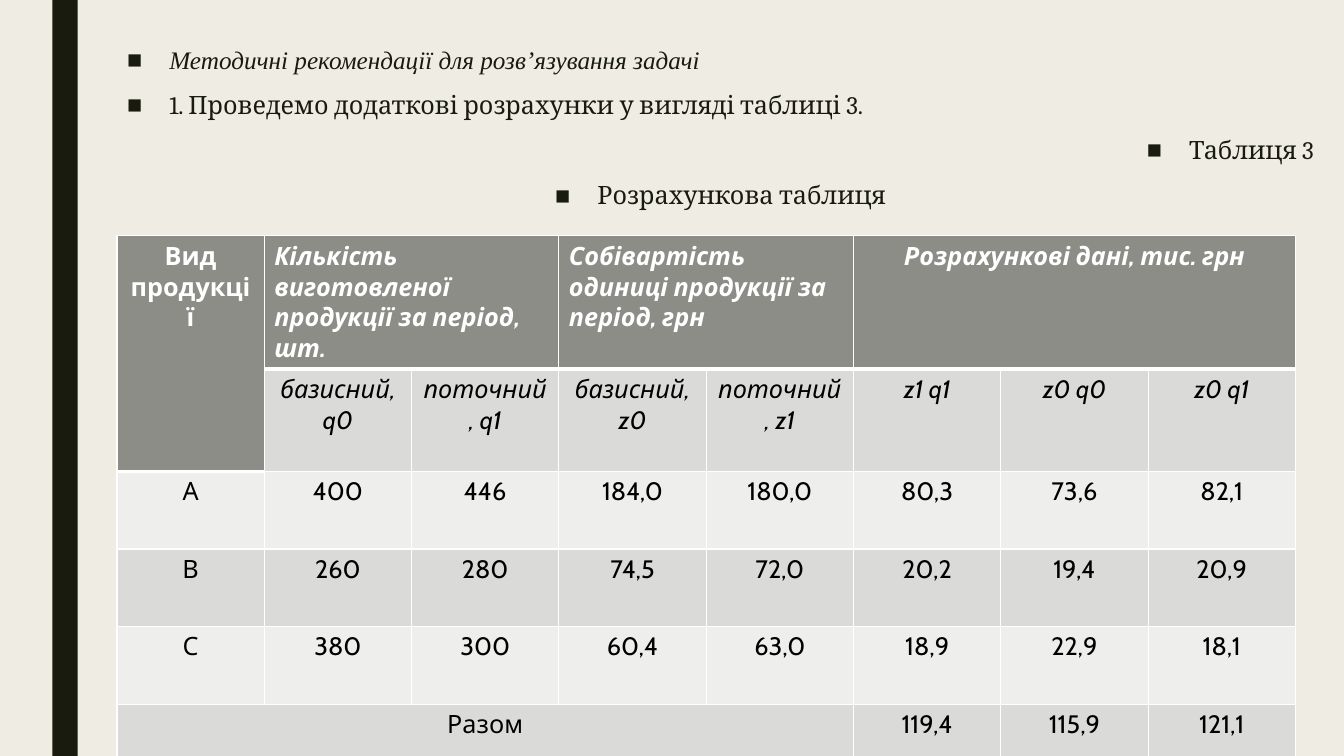
from lxml import etree
from pptx import Presentation
from pptx.dml.color import RGBColor
from pptx.enum.shapes import MSO_SHAPE
from pptx.enum.text import MSO_ANCHOR, MSO_AUTO_SIZE, PP_ALIGN
from pptx.oxml.ns import qn
from pptx.util import Inches, Pt

LEFT, CENTER, RIGHT = PP_ALIGN.LEFT, PP_ALIGN.CENTER, PP_ALIGN.RIGHT
RECTANGLE = MSO_SHAPE.RECTANGLE
TOP, NO_AUTOFIT = MSO_ANCHOR.TOP, MSO_AUTO_SIZE.NONE

INTRO = [
    # text, alignment, font, italic
    ("Методичні рекомендації для розв’язування задачі", LEFT, "Times New Roman", True),
    ("1. Проведемо додаткові розрахунки у вигляді таблиці 3.", LEFT, "Cambria", False),
    ("Таблиця 3", RIGHT, "Cambria", False),
    ("Розрахункова таблиця", CENTER, "Cambria", False),
]
# None marks a cell covered by a merged neighbour
ROWS = [
    ["Вид продукції", "Кількість виготовленої продукції за період, шт.", None,
     "Собівартість одиниці продукції за період, грн", None,
     "Розрахункові дані, тис. грн", None, None],
    [None, "базисний, q0", "поточний, q1", "базисний, z0", "поточний, z1",
     "z1 q1", "z0 q0", "z0 q1"],
    ["А", "400", "446", "184,0", "180,0", "80,3", "73,6", "82,1"],
    ["В", "260", "280", "74,5", "72,0", "20,2", "19,4", "20,9"],
    ["С", "380", "300", "60,4", "63,0", "18,9", "22,9", "18,1"],
    ["Разом", None, None, None, None, "119,4", "115,9", "121,1"],
]
MERGES = [((0, 0), (1, 0)), ((0, 1), (0, 2)), ((0, 3), (0, 4)),
          ((0, 5), (0, 7)), ((5, 0), (5, 4))]
LEFT_ALIGNED = {(0, 1), (0, 3)}

THEME = {
    "background": "EFEDE3", "ink": "191B0E", "header": "8C8D86",
    "bands": ("EEEEED", "DADBD9"), "white": "FFFFFF", "black": "000000",
    "table_font": "Cabin", "size": Pt(18), "thin": Pt(1), "thick": Pt(3),
}


def rgb(name):
    return RGBColor.from_string(THEME[name])


def set_format(target, values):
    for name, value in values.items():
        setattr(target, name, value)


def add_bullet(p):
    pPr = p._p.get_or_add_pPr()
    pPr.set("marL", str(Inches(0.42)))
    pPr.set("indent", str(-Inches(0.42)))
    etree.SubElement(pPr, qn("a:buFont"), typeface="Arial")
    etree.SubElement(pPr, qn("a:buChar"), char="■")


def set_borders(cell, top, bottom):
    """Draw white cell edges; call before setting the cell's fill."""
    tcPr = cell._tc.get_or_add_tcPr()
    thin = THEME["thin"]
    for side, width in (("L", thin), ("R", thin), ("T", top), ("B", bottom)):
        line = etree.SubElement(tcPr, qn(f"a:ln{side}"), w=str(width))
        fill = etree.SubElement(line, qn("a:solidFill"))
        etree.SubElement(fill, qn("a:srgbClr"), val=THEME["white"])


def add_side_bar(s):
    bar = s.shapes.add_shape(RECTANGLE, Inches(0.52), 0, Inches(0.25), Inches(7.5))
    bar.shadow.inherit = False
    bar.fill.solid()
    bar.fill.fore_color.rgb = rgb("ink")
    bar.line.fill.background()


def add_intro(s):
    s.shapes.title.element.getparent().remove(s.shapes.title.element)
    body = s.placeholders[1]
    set_format(body, {"left": Inches(1.16), "top": Inches(0.41),
                      "width": Inches(11.97), "height": Inches(7.09)})
    tf = body.text_frame
    set_format(tf, {"word_wrap": True, "auto_size": NO_AUTOFIT, "vertical_anchor": TOP})
    for i, (text, align, font, italic) in enumerate(INTRO):
        p = tf.add_paragraph() if i else tf.paragraphs[0]
        add_bullet(p)
        set_format(p, {"alignment": align, "line_spacing": 0.94,
                       "space_before": Pt(10 if i else 0), "space_after": Pt(2)})
        r = p.add_run()
        r.text = text
        set_format(r.font, {"name": font, "size": THEME["size"], "italic": italic})
        r.font.color.rgb = rgb("ink")


def add_calculation_table(s):
    row_count, col_count = len(ROWS), len(ROWS[0])
    table = s.shapes.add_table(row_count, col_count, Inches(1.16), Inches(2.34),
                               Inches(11.69), Inches(4.62)).table
    for column in table.columns:
        column.width = Inches(11.69 / col_count)
    for row in table.rows:
        row.height = Inches(0.77)
    for start, end in MERGES:
        table.cell(*start).merge(table.cell(*end))

    for y, row in enumerate(ROWS):
        for x, text in enumerate(row):
            cell = table.cell(y, x)
            is_header = y == 0 or (y == 1 and x == 0)
            set_borders(cell,
                        top=THEME["thick" if y == 1 or (y, x) == (2, 0) else "thin"],
                        bottom=THEME["thick" if is_header else "thin"])
            cell.fill.solid()
            cell.fill.fore_color.rgb = (
                rgb("header") if is_header else RGBColor.from_string(THEME["bands"][y % 2]))
            if text is None:
                continue
            p = cell.text_frame.paragraphs[0]
            p.alignment = LEFT if (y, x) in LEFT_ALIGNED else CENTER
            r = p.add_run()
            r.text = text
            set_format(r.font, {"name": THEME["table_font"], "size": THEME["size"],
                                "bold": is_header, "italic": y < 2 and x > 0})
            r.font.color.rgb = rgb("white" if is_header else "black")


def main():
    prs = Presentation()
    set_format(prs, {"slide_width": Inches(13.33), "slide_height": Inches(7.5)})
    s = prs.slides.add_slide(prs.slide_layouts[1])
    s.background.fill.solid()
    s.background.fill.fore_color.rgb = rgb("background")
    add_side_bar(s)
    add_intro(s)
    add_calculation_table(s)
    prs.save("out.pptx")


if __name__ == "__main__":
    main()
